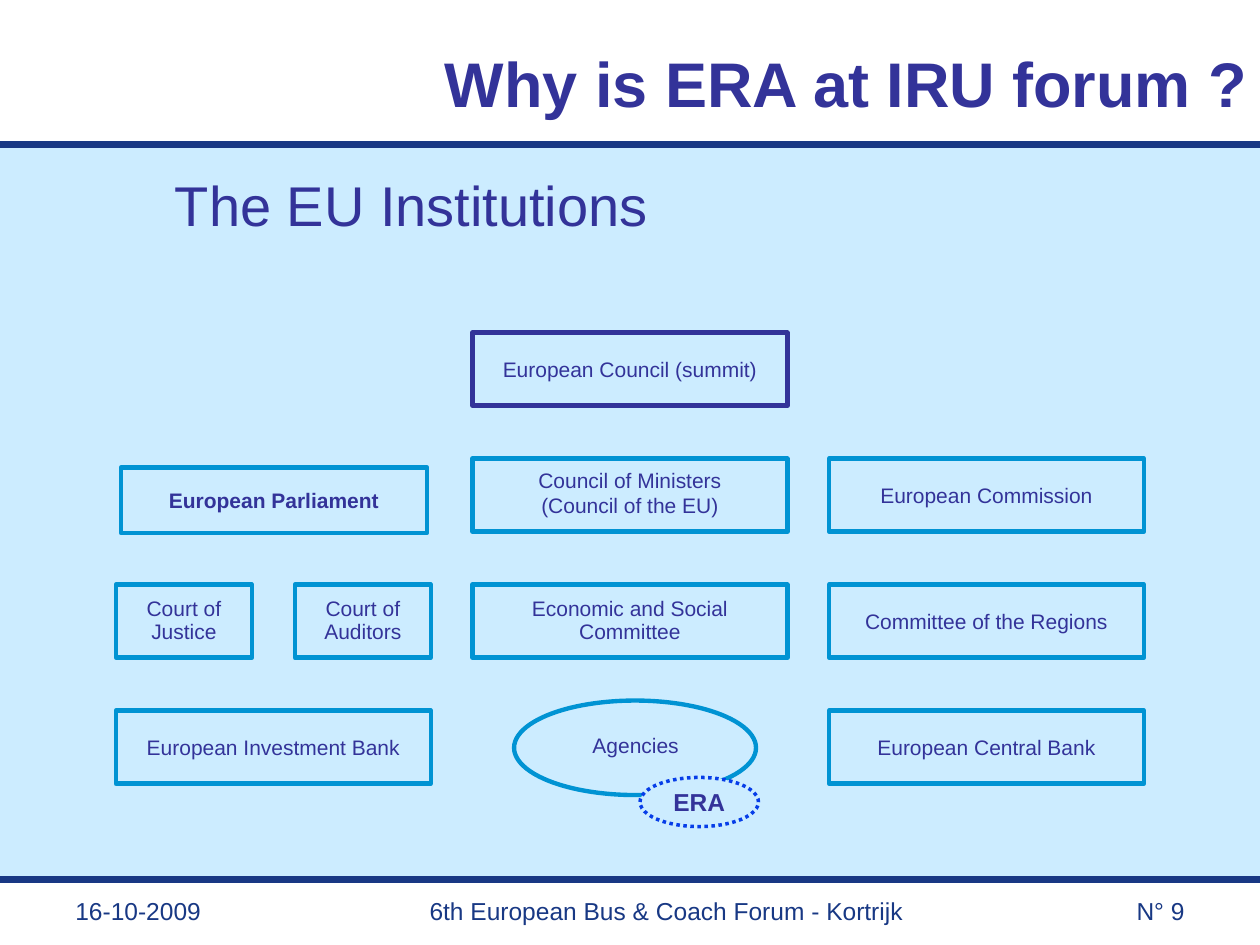
"""Build the EU institutions slide."""
from dataclasses import dataclass

from lxml import etree
from pptx import Presentation
from pptx.dml.color import RGBColor
from pptx.enum.dml import MSO_LINE
from pptx.enum.shapes import MSO_CONNECTOR, MSO_SHAPE
from pptx.enum.text import MSO_ANCHOR, PP_ALIGN
from pptx.oxml.ns import qn
from pptx.util import Emu, Pt

RECT, OVAL = MSO_SHAPE.RECTANGLE, MSO_SHAPE.OVAL
STRAIGHT = MSO_CONNECTOR.STRAIGHT
DOTS = MSO_LINE.ROUND_DOT
TOP, MIDDLE = MSO_ANCHOR.TOP, MSO_ANCHOR.MIDDLE
LEFT, CENTER, RIGHT = PP_ALIGN.LEFT, PP_ALIGN.CENTER, PP_ALIGN.RIGHT


@dataclass(frozen=True)
class Theme:
    font: str = "Arial"
    ink: str = "333399"
    navy: str = "183884"
    sky: str = "CCECFF"
    blue: str = "0093D3"
    dot: str = "063DE8"
    title: int = 36
    head: int = 32
    foot: int = 14
    label: int = 12


def px(n):
    return Emu(n * 9144)


def rgb(code):
    return RGBColor.from_string(code)


class Deck:
    def __init__(self, theme):
        self.theme = theme
        self.file = Presentation()
        self.file.slide_width, self.file.slide_height = px(1000), px(750)
        self.slide = self.file.slides.add_slide(self.file.slide_layouts[6])

    def label(self, shape, text, size, color, align, anchor, bold, lead):
        frame = shape.text_frame
        frame.word_wrap = True
        frame.vertical_anchor = anchor
        for i, line in enumerate(text.split("\n")):
            para = frame.add_paragraph() if i else frame.paragraphs[0]
            para.text = line
            para.alignment = align
            para.line_spacing = lead
            if i:
                para.space_before = Pt(3)
            font = para.font
            font.name, font.size, font.bold = self.theme.font, Pt(size), bold
            font.color.rgb = rgb(color)

    def text(self, box, text, size, color, align=LEFT, anchor=TOP,
             bold=False, lead=1.0):
        shape = self.slide.shapes.add_textbox(*map(px, box))
        self.label(shape, text, size, color, align, anchor, bold, lead)

    def shape(self, kind, box, fill=None, line=None, width=2.5, dash=None):
        shape = self.slide.shapes.add_shape(kind, *map(px, box))
        shape.shadow.inherit = False
        if fill:
            shape.fill.solid()
            shape.fill.fore_color.rgb = rgb(fill)
        else:
            shape.fill.background()
        if line:
            shape.line.color.rgb = rgb(line)
            shape.line.width = Pt(width)
            if dash:
                shape.line.dash_style = dash
        else:
            shape.line.fill.background()
        return shape

    def node(self, box, text, line=None, bold=False, lead=1.0):
        shape = self.shape(RECT, box, line=line or self.theme.blue)
        self.label(shape, text, self.theme.label, self.theme.ink, CENTER,
                   MIDDLE, bold, lead)

    def rule(self, y):
        line = self.slide.shapes.add_connector(
            STRAIGHT, px(0), px(y), px(1000), px(y))
        line.line.color.rgb = rgb(self.theme.navy)
        line.line.width = Pt(4)
        etree.SubElement(line._element.spPr, qn("a:effectLst"))


def cell(col, row, wide=250):
    return 92 + round(col * 283), 264 + row * 100, wide, 58


def main():
    theme = Theme()
    deck = Deck(theme)
    deck.shape(RECT, (0, 115, 1000, 583), fill=theme.sky)
    for y in (115, 698):
        deck.rule(y)
    deck.text((50, 30, 950, 125), "Why is ERA at IRU forum ?", theme.title,
              theme.ink, RIGHT, bold=True)
    deck.text((129, 112, 686, 106), "The EU Institutions", theme.head,
              theme.ink, anchor=MIDDLE, lead=0.9)
    for x, wide, text, align in (
        (50, 233, "16-10-2009", LEFT),
        (266, 526, "6th European Bus & Coach Forum - Kortrijk", CENTER),
        (717, 233, "N° 9", RIGHT),
    ):
        deck.text((x, 706, wide, 29), text, theme.foot, theme.navy, align)

    deck.node(cell(1, 0), "European Council (summit)", line=theme.ink)
    deck.node((96, 371, 243, 52), "European Parliament", bold=True)
    deck.node(cell(1, 1), "Council of Ministers\n(Council of the EU)", lead=0.8)
    deck.node(cell(0, 2, 108), "Court of Justice", lead=0.9)
    deck.node(cell(0.5, 2, 108), "Court of Auditors", lead=0.9)
    deck.node(cell(1, 2), "Economic and Social Committee", lead=0.9)
    for col, row, text in (
        (2, 1, "European Commission"),
        (2, 2, "Committee of the Regions"),
        (0, 3, "European Investment Bank"),
        (2, 3, "European Central Bank"),
    ):
        deck.node(cell(col, row), text)

    deck.shape(OVAL, (408, 556, 192, 75), line=theme.blue)
    deck.text((392, 570, 225, 42), "Agencies", theme.label, theme.ink,
              CENTER, MIDDLE)
    era = deck.shape(OVAL, (508, 617, 94, 39), theme.sky, theme.dot, 2, DOTS)
    deck.label(era, "ERA", theme.foot, theme.ink, CENTER, MIDDLE, True, 1.0)
    deck.file.save("out.pptx")


if __name__ == "__main__":
    main()
